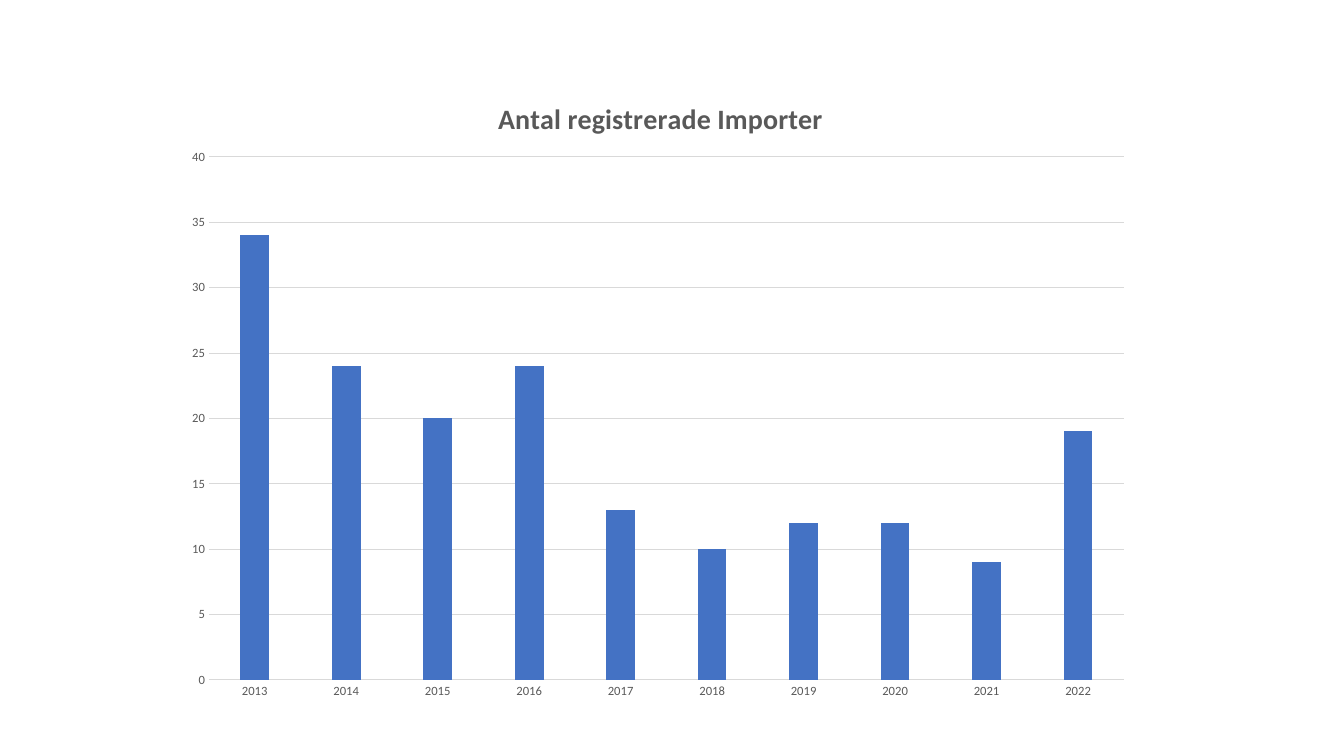
from lxml.etree import SubElement
from pptx import Presentation
from pptx.chart.data import CategoryChartData
from pptx.dml.color import RGBColor
from pptx.enum.chart import XL_CHART_TYPE, XL_TICK_MARK
from pptx.oxml.ns import qn
from pptx.util import Pt

PIXELS_PER_INCH = 100.8
FONT = "Calibri"
BLUE = RGBColor(0x44, 0x72, 0xC4)
GRAY = RGBColor(0x59, 0x59, 0x59)
LIGHT_GRAY = RGBColor(0xD9, 0xD9, 0xD9)

YEARS = [str(year) for year in range(2013, 2023)]
IMPORTS = [34, 24, 20, 24, 13, 10, 12, 12, 9, 19]


def px(length):
    """Turn pixels into EMU."""
    return round(length * 914400 / PIXELS_PER_INCH)


def style_font(font, size, bold=False):
    font.name = FONT
    font.size = Pt(size)
    font.bold = bold
    font.color.rgb = GRAY


def style_line(line):
    line.color.rgb = LIGHT_GRAY
    line.width = Pt(0.75)


def set_layout(parent, position, **settings):
    """Give a chart part a manual layout, as its child at the position."""
    layout = parent.find(qn("c:layout"))
    if layout is None:
        layout = SubElement(parent, qn("c:layout"))
        parent.insert(position, layout)
    manual = SubElement(layout, qn("c:manualLayout"))
    for name, value in settings.items():
        SubElement(manual, qn(f"c:{name}")).set("val", str(value))


def add_imports_chart(slide, left, top, width, height):
    data = CategoryChartData()
    data.categories = YEARS
    data.add_series("Series 1", IMPORTS)
    chart = slide.shapes.add_chart(
        XL_CHART_TYPE.COLUMN_CLUSTERED,
        px(left), px(top), px(width), px(height), data,
    ).chart
    chart.has_legend = False
    style_font(chart.font, 10)

    chart.has_title = True
    text_frame = chart.chart_title.text_frame
    text_frame.text = "Antal registrerade Importer"
    style_font(text_frame.paragraphs[0].font, 20, bold=True)

    plot = chart.plots[0]
    plot.gap_width = 219
    plot.overlap = -27
    plot.vary_by_categories = False
    fill = plot.series[0].format.fill
    fill.solid()
    fill.fore_color.rgb = BLUE

    for axis in (chart.category_axis, chart.value_axis):
        axis.major_tick_mark = XL_TICK_MARK.NONE
        axis.minor_tick_mark = XL_TICK_MARK.NONE
        style_font(axis.tick_labels.font, 9)
    style_line(chart.category_axis.format.line)

    value_axis = chart.value_axis
    value_axis.format.line.fill.background()
    style_line(value_axis.major_gridlines.format.line)
    value_axis.minimum_scale = 0
    value_axis.maximum_scale = 40
    value_axis.major_unit = 5

    chart_element = chart.element.find(qn("c:chart"))
    set_layout(chart_element.find(qn("c:title")), 1,
               xMode="edge", yMode="edge", x=0.33, y=0.04)
    set_layout(chart_element.find(qn("c:plotArea")), 0,
               layoutTarget="inner", xMode="edge", yMode="edge",
               x=round(36 / width, 4), y=round(89 / height, 4),
               w=round(915 / width, 4), h=round(523 / height, 4))


def main():
    presentation = Presentation()
    presentation.slide_width = px(1344)
    presentation.slide_height = px(756)
    slide = presentation.slides.add_slide(presentation.slide_layouts[6])
    add_imports_chart(slide, 173, 68, 970, 645)
    presentation.save("out.pptx")


if __name__ == "__main__":
    main()
